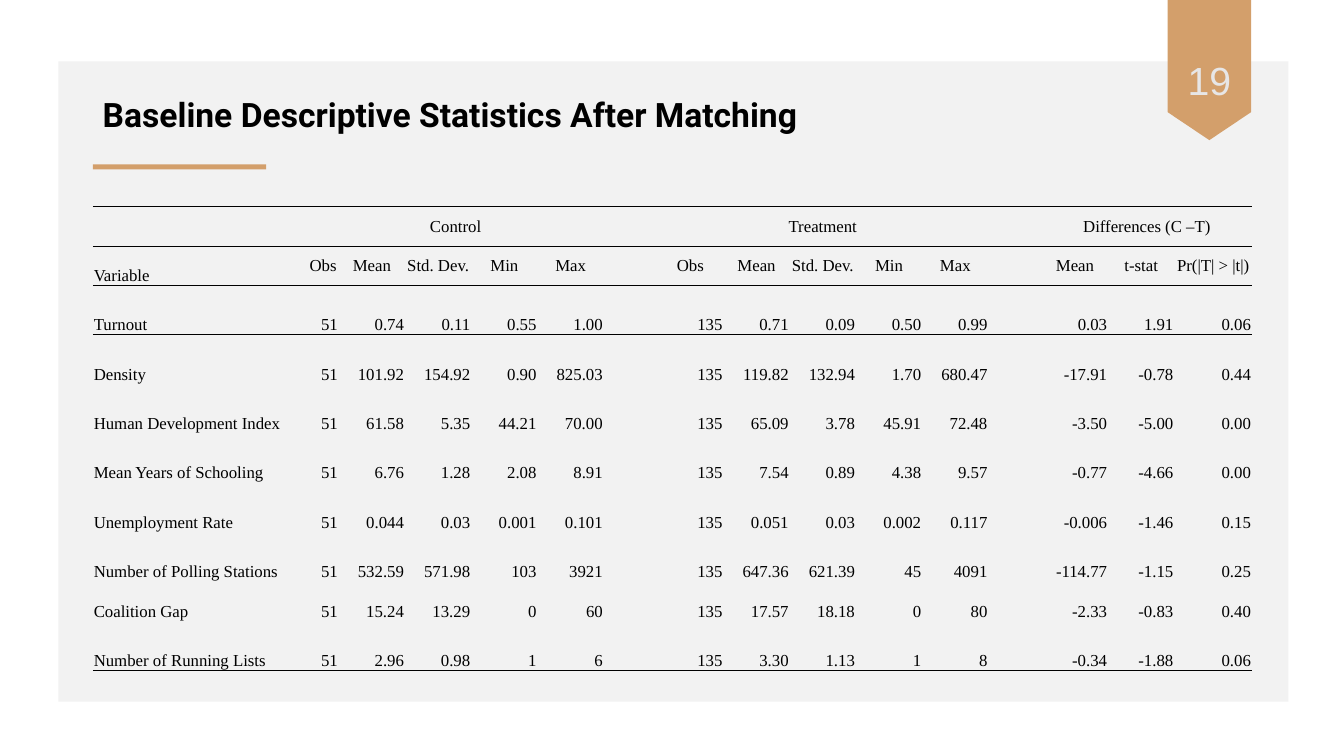
from lxml import etree
from pptx import Presentation
from pptx.dml.color import RGBColor
from pptx.enum import shapes, text
from pptx.oxml import ns
from pptx.util import Inches, Pt

COLORS = {"panel": "F2F2F2", "accent": "D39F6B", "ink": "000000", "number": "E7E6E6"}
PLAIN_STYLE = "{2D5ABB26-0587-4C30-8999-92F81FD0307C}"
RULE_WIDTH = Pt(0.5)

TABLE_WIDTH = 11.5
NAME_WIDTH, OBS_WIDTH, GAP_WIDTH, LAST_WIDTH = 2.13, 0.31, 0.53, 0.77
STAT_WIDTH = (TABLE_WIDTH - NAME_WIDTH - OBS_WIDTH - 2 * GAP_WIDTH - LAST_WIDTH) / 11
COLUMN_WIDTHS = [NAME_WIDTH, OBS_WIDTH, *[STAT_WIDTH] * 4, GAP_WIDTH,
                 *[STAT_WIDTH] * 5, GAP_WIDTH, *[STAT_WIDTH] * 2, LAST_WIDTH]
LOW_ROW, TALL_ROW = 0.39, 0.49
LOW_ROWS = (0, 1, 8)

GROUPS = {1: ("Control", 5), 7: ("Treatment", 5), 13: ("Differences (C –T)", 3)}
SAMPLE_HEADS = ["Obs", "Mean", "Std. Dev.", "Min", "Max"]
DIFFERENCE_HEADS = ["Mean", "t-stat", "Pr(|T| > |t|)"]
STATISTICS = [
    ("Turnout", "51 0.74 0.11 0.55 1.00", "135 0.71 0.09 0.50 0.99", "0.03 1.91 0.06"),
    ("Density", "51 101.92 154.92 0.90 825.03", "135 119.82 132.94 1.70 680.47",
     "-17.91 -0.78 0.44"),
    ("Human Development Index", "51 61.58 5.35 44.21 70.00", "135 65.09 3.78 45.91 72.48",
     "-3.50 -5.00 0.00"),
    ("Mean Years of Schooling", "51 6.76 1.28 2.08 8.91", "135 7.54 0.89 4.38 9.57",
     "-0.77 -4.66 0.00"),
    ("Unemployment Rate", "51 0.044 0.03 0.001 0.101", "135 0.051 0.03 0.002 0.117",
     "-0.006 -1.46 0.15"),
    ("Number of Polling Stations", "51 532.59 571.98 103 3921", "135 647.36 621.39 45 4091",
     "-114.77 -1.15 0.25"),
    ("Coalition Gap", "51 15.24 13.29 0 60", "135 17.57 18.18 0 80", "-2.33 -0.83 0.40"),
    ("Number of Running Lists", "51 2.96 0.98 1 6", "135 3.30 1.13 1 8", "-0.34 -1.88 0.06"),
]

CELL_FORMAT = {"margin_left": Inches(0.01), "margin_right": Inches(0.01),
               "margin_top": Inches(0.01), "margin_bottom": 0}
CELL_FONT = {"name": "Times New Roman", "size": Pt(12)}


def apply_format(target, values):
    for name, value in values.items():
        setattr(target, name, value)


def write_text(frame, words, color, font, layout):
    para = frame.paragraphs[0]
    apply_format(para, layout)
    span = para.add_run()
    span.text = words
    apply_format(span.font, font)
    span.font.color.rgb = RGBColor.from_string(COLORS[color])


def add_block(page, kind, bounds, color):
    block = page.shapes.add_shape(kind, *map(Inches, bounds))
    block.shadow.inherit = False
    block.fill.solid()
    block.fill.fore_color.rgb = RGBColor.from_string(COLORS[color])
    block.line.fill.background()


def add_label(page, bounds, words, color, anchor, font, layout):
    box = page.shapes.add_textbox(*map(Inches, bounds))
    apply_format(box.text_frame, {"word_wrap": True, "vertical_anchor": anchor})
    write_text(box.text_frame, words, color, font, layout)


def add_rule(cell, side):
    properties = cell._tc.get_or_add_tcPr()
    line = etree.SubElement(properties, ns.qn(f"a:ln{side}"), w=str(RULE_WIDTH))
    fill = etree.SubElement(line, ns.qn("a:solidFill"))
    etree.SubElement(fill, ns.qn("a:srgbClr"), val=COLORS["ink"])


def fill_cell(cell, words, anchor, align, sides):
    apply_format(cell, {**CELL_FORMAT, "vertical_anchor": anchor})
    for side in sides:
        add_rule(cell, side)
    cell.fill.background()
    if words:
        write_text(cell.text_frame, words, "ink", CELL_FONT, {"alignment": align})


def table_rows():
    groups = [GROUPS.get(column, ("", 1))[0] for column in range(len(COLUMN_WIDTHS))]
    heads = ["Variable", *SAMPLE_HEADS, "", *SAMPLE_HEADS, "", *DIFFERENCE_HEADS]
    body = [[name, *control.split(), "", *treatment.split(), "", *difference.split()]
            for name, control, treatment, difference in STATISTICS]
    return [groups, heads, *body]


def cell_layout(row, column):
    if column == 0:
        return text.MSO_ANCHOR.BOTTOM, text.PP_ALIGN.LEFT
    if row < 2:
        return text.MSO_ANCHOR.MIDDLE, text.PP_ALIGN.CENTER
    return text.MSO_ANCHOR.BOTTOM, text.PP_ALIGN.RIGHT


def add_statistics(page, left, top):
    rows = table_rows()
    heights = [LOW_ROW if row in LOW_ROWS else TALL_ROW for row in range(len(rows))]
    frame = page.shapes.add_table(len(rows), len(COLUMN_WIDTHS), Inches(left), Inches(top),
                                  Inches(TABLE_WIDTH), Inches(sum(heights)))
    table = frame.table
    apply_format(table, {"first_row": False, "horz_banding": False})
    table._tbl.tblPr.find(ns.qn("a:tableStyleId")).text = PLAIN_STYLE
    for column, width in zip(table.columns, COLUMN_WIDTHS):
        column.width = Inches(width)
    for row, height in zip(table.rows, heights):
        row.height = Inches(height)
    rules = {0: "TB", 1: "TB", 2: "T", len(rows) - 1: "B"}
    for row, values in enumerate(rows):
        for column, words in enumerate(values):
            fill_cell(table.cell(row, column), words, *cell_layout(row, column),
                      rules.get(row, ""))
    for column, (_, count) in GROUPS.items():
        table.cell(0, column).merge(table.cell(0, column + count - 1))


def main():
    deck = Presentation()
    apply_format(deck, {"slide_width": Inches(13.33), "slide_height": Inches(7.5)})
    page = deck.slides.add_slide(deck.slide_layouts[6])
    kinds = shapes.MSO_SHAPE
    add_block(page, kinds.RECTANGLE, (0.58, 0.61, 12.2, 6.35), "panel")
    add_block(page, kinds.RECTANGLE, (0.92, 1.63, 1.72, 0.05), "accent")
    add_label(page, (0.92, 0.28, 11.49, 1.11), "Baseline Descriptive Statistics After Matching",
              "ink", text.MSO_ANCHOR.BOTTOM,
              {"name": "Roboto", "size": Pt(24), "bold": True}, {"line_spacing": 0.9})
    add_block(page, kinds.FLOWCHART_OFFPAGE_CONNECTOR, (11.58, 0, 0.83, 1.39), "accent")
    add_label(page, (11.58, 0.24, 0.83, 1.11), "19", "number", text.MSO_ANCHOR.MIDDLE,
              {"name": "Arial", "size": Pt(28)}, {"alignment": text.PP_ALIGN.CENTER})
    add_statistics(page, 0.92, 2.05)
    deck.save("out.pptx")


if __name__ == "__main__":
    main()
